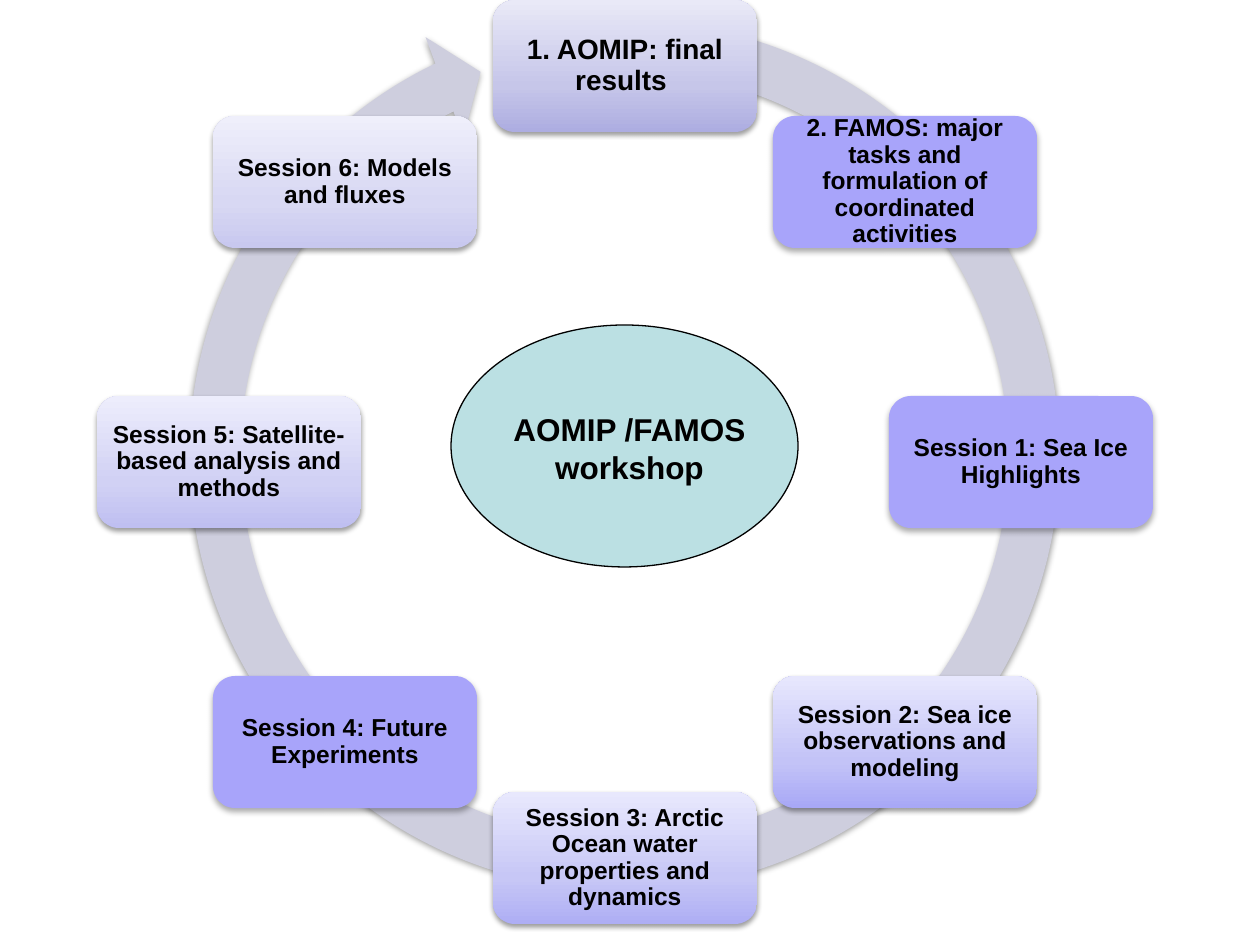
import copy
import math

from pptx import Presentation, util as u
from pptx.dml.color import RGBColor
from pptx.enum import shapes, text
from pptx.oxml import parse_xml
from pptx.oxml.ns import nsdecls, qn

PX = 914400 / 126
CENTER_X, CENTER_Y, RADIUS = 625, 462, 396
BOX_W, BOX_H = 264, 132
BLACK = "000000"
VIOLET = ["A8A4FA"]

SESSIONS = [
    ("1. AOMIP: final results ", 16, ["ADADE1", "C6C6E9", "E9E9F7"]),
    ("2. FAMOS: major tasks and formulation of coordinated activities", 14, VIOLET),
    ("Session 1: Sea Ice Highlights", 14, VIOLET),
    ("Session 2: Sea ice observations and modeling", 14, ["A8A8F6", "C3C3F7", "E7E7FD"]),
    ("Session 3: Arctic Ocean water properties and dynamics", 14,
     ["AEAEF4", "C7C7F6", "E8E8FD"]),
    ("Session 4: Future Experiments", 14, VIOLET),
    ("Session 5: Satellite-based analysis and methods", 14, ["BFBFF1", "D1D1F4", "EDEDFC"]),
    ("Session 6: Models and fluxes", 14, ["C8C8EF", "D8D8F3", "EFEFFB"]),
]


def px(n):
    return u.Emu(round(n * PX))


def rgb(value):
    return RGBColor.from_string(value)


def add_shape(s, kind, x, y, w, h):
    sp = s.shapes.add_shape(kind, px(x), px(y), px(w), px(h))
    sp.shadow.inherit = False
    sp.line.fill.background()
    return sp


def fill_solid(sp, color):
    sp.fill.solid()
    sp.fill.fore_color.rgb = rgb(color)


def fill_gradient(sp, colors):
    sp.fill.gradient()
    sp.fill.gradient_angle = 90
    stops = sp._element.spPr.find(qn("a:gradFill")).find(qn("a:gsLst"))
    stops.insert(1, copy.deepcopy(stops[0]))
    for stop, color, position in zip(sp.fill.gradient_stops, colors, (0, 0.35, 1)):
        stop.color.rgb = rgb(color)
        stop.position = position


def add_shadow(sp, opacity, blur, dist):
    sp._element.spPr.find(qn("a:effectLst")).append(parse_xml(
        f'<a:outerShdw {nsdecls("a")} blurRad="{u.Pt(blur)}" dist="{u.Pt(dist)}" '
        f'dir="5400000" rotWithShape="0"><a:srgbClr val="{BLACK}">'
        f'<a:alpha val="{opacity * 1000}"/></a:srgbClr></a:outerShdw>'))


def write(sp, words, size):
    tf = sp.text_frame
    tf.word_wrap = True
    p = tf.paragraphs[0]
    p.alignment = text.PP_ALIGN.CENTER
    r = p.add_run()
    r.text = words
    r.font.name = "Arial"
    r.font.size = u.Pt(size)
    r.font.bold = True
    r.font.color.rgb = rgb(BLACK)
    return tf


def add_cycle_arrow(s):
    sp = add_shape(s, shapes.MSO_SHAPE.CIRCULAR_ARROW, 161, -8, 927, 927)
    for i, value in enumerate((0.055, 3.307, 146.354, 168.821, 0.058)):
        sp.adjustments[i] = value
    fill_solid(sp, "CECEDE")
    add_shadow(sp, 38, 3.1, 1.6)


def add_session(s, angle, words, size, colors):
    x = CENTER_X + RADIUS * math.sin(angle) - BOX_W / 2
    y = CENTER_Y - RADIUS * math.cos(angle) - BOX_H / 2
    sp = add_shape(s, shapes.MSO_SHAPE.ROUNDED_RECTANGLE, x, y, BOX_W, BOX_H)
    if len(colors) == 1:
        fill_solid(sp, colors[0])
        add_shadow(sp, 32, 3.5, 2.2)
    else:
        fill_gradient(sp, colors)
        add_shadow(sp, 38, 3.1, 1.6)
    tf = write(sp, words, size)
    tf.vertical_anchor = text.MSO_ANCHOR.MIDDLE
    tf.margin_left = tf.margin_right = tf.margin_top = tf.margin_bottom = px(8)
    tf.paragraphs[0].line_spacing = 0.9


def add_hub(s):
    sp = add_shape(s, shapes.MSO_SHAPE.OVAL, 451, 325, 347, 242)
    fill_solid(sp, "BBE0E3")
    sp.line.color.rgb = rgb(BLACK)
    sp.line.width = u.Pt(0.75)
    label = s.shapes.add_textbox(px(472), px(404), px(315), px(89))
    write(label, "AOMIP /FAMOS workshop", 18)


def main():
    prs = Presentation()
    prs.slide_width, prs.slide_height = px(1260), px(945)
    s = prs.slides.add_slide(prs.slide_layouts[6])
    add_cycle_arrow(s)
    for i, session in enumerate(SESSIONS):
        add_session(s, math.tau * i / len(SESSIONS), *session)
    add_hub(s)
    prs.save("out.pptx")


if __name__ == "__main__":
    main()
